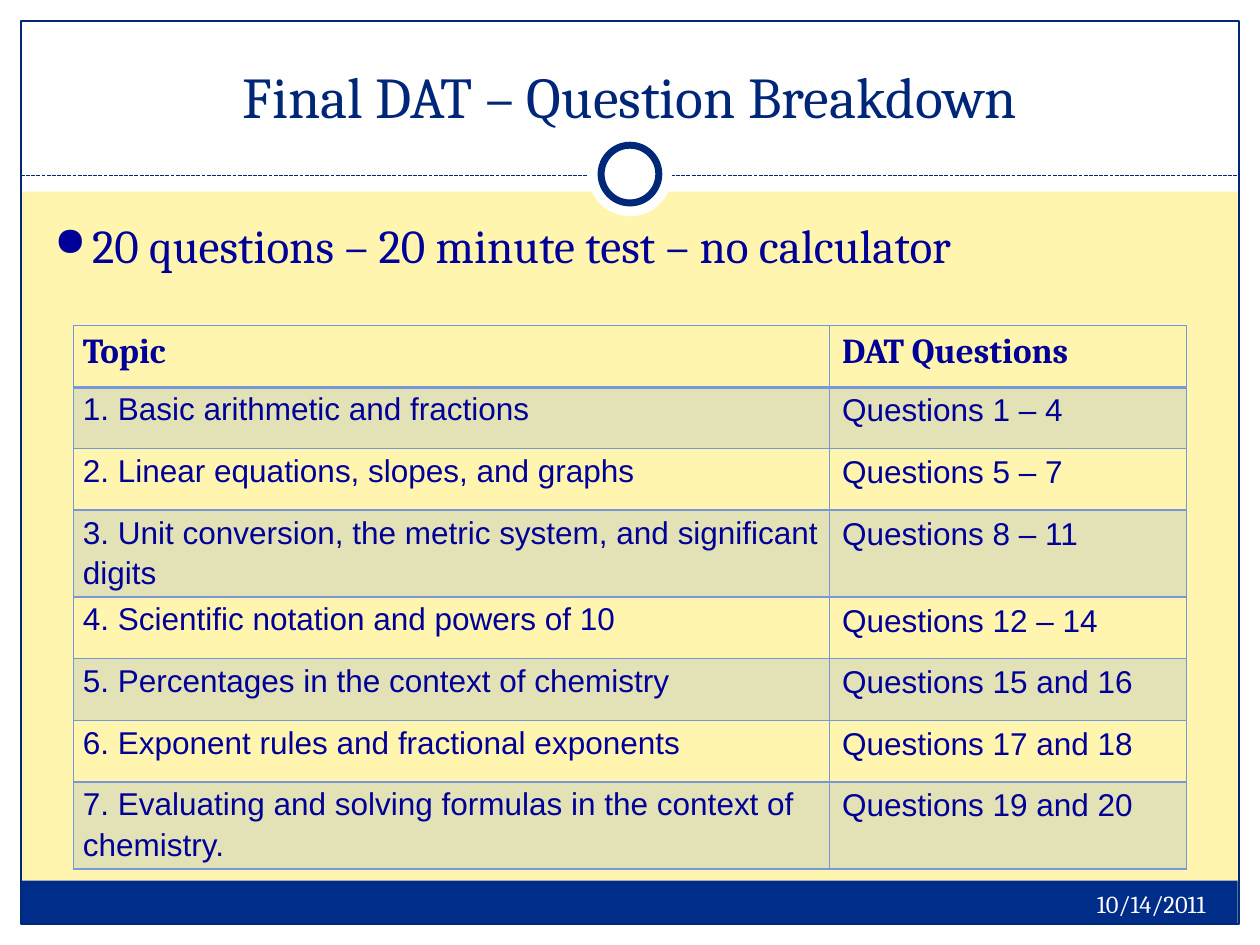
from typing import NamedTuple, Optional

from pptx import Presentation
from pptx.dml.color import RGBColor
from pptx.enum.dml import MSO_LINE
from pptx.enum.shapes import MSO_CONNECTOR, MSO_SHAPE as SH
from pptx.enum.text import MSO_ANCHOR as ANCHOR, PP_ALIGN as ALIGN
from pptx.oxml import parse_xml
from pptx.oxml.ns import nsdecls, qn
from pptx.util import Pt

WHITE = RGBColor(0xFF, 0xFF, 0xFF)
CREAM = RGBColor(0xFF, 0xF5, 0xAE)
NAVY = RGBColor(0x00, 0x28, 0x79)
TITLE_NAVY = RGBColor(0x00, 0x26, 0x78)
FOOTER_BLUE = RGBColor(0x00, 0x2D, 0x89)
INK = RGBColor(0x00, 0x00, 0x99)
GRID = RGBColor(0x75, 0x98, 0xD9)
SERIF, SANS = "Cambria", "Arial"

W, H = 720, 540
EDGE = 12


class Panel(NamedTuple):
    x: float
    y: float
    w: float
    h: float
    fill: Optional[RGBColor] = WHITE
    line: float = 0
    kind: SH = SH.RECTANGLE


class Topic(NamedTuple):
    name: str
    questions: str


BACKDROP = [
    Panel(0, H - EDGE, W, EDGE),
    Panel(0, 0, W, 109.5),
    Panel(0, 0, EDGE, H),
    Panel(W - EDGE, 0, EDGE, H),
    Panel(11.75, 503.25, 695.5, 24.5, FOOTER_BLUE),
    Panel(EDGE, EDGE, W - 2 * EDGE, H - 2 * EDGE, None, 0.75),
]
RINGS = [
    Panel(336, 75.6, 48, 48, kind=SH.OVAL),
    Panel(343.5, 83, 33, 33, line=4, kind=SH.OVAL),
]
HEADER = Topic("Topic", "DAT Questions")
TOPICS = [
    Topic("1. Basic arithmetic and fractions", "Questions 1 – 4"),
    Topic("2. Linear equations, slopes, and graphs", "Questions 5 – 7"),
    Topic("3. Unit conversion, the metric system, and significant digits", "Questions 8 – 11"),
    Topic("4. Scientific notation and powers of 10", "Questions 12 – 14"),
    Topic("5. Percentages in the context of chemistry", "Questions 15 and 16"),
    Topic("6. Exponent rules and fractional exponents", "Questions 17 and 18"),
    Topic("7. Evaluating and solving formulas in the context of chemistry.", "Questions 19 and 20"),
]


def write(tf, text: str, *, size: float, color: RGBColor = INK, font: str = SERIF,
          bold: bool = False, align=ALIGN.LEFT, spacing: float = 1.0):
    p = tf.paragraphs[0]
    p.alignment, p.line_spacing = align, spacing
    r = p.add_run()
    r.text = text
    f = r.font
    f.size, f.name, f.bold = Pt(size), font, bold
    f.color.rgb = color
    return p


def add_box(s, x: float, y: float, w: float, h: float, anchor=ANCHOR.TOP):
    tf = s.shapes.add_textbox(Pt(x), Pt(y), Pt(w), Pt(h)).text_frame
    tf.word_wrap, tf.vertical_anchor = True, anchor
    return tf


def add_panel(s, panel: Panel) -> None:
    sp = s.shapes.add_shape(panel.kind, Pt(panel.x), Pt(panel.y), Pt(panel.w), Pt(panel.h))
    sp.shadow.inherit = False
    if panel.fill is None:
        sp.fill.background()
    else:
        sp.fill.solid()
        sp.fill.fore_color.rgb = panel.fill
    if panel.line:
        sp.line.color.rgb, sp.line.width = NAVY, Pt(panel.line)
    else:
        sp.line.fill.background()


def add_rule(s, y: float) -> None:
    cn = s.shapes.add_connector(MSO_CONNECTOR.STRAIGHT, Pt(EDGE), Pt(y), Pt(W - EDGE), Pt(y))
    cn.line.color.rgb, cn.line.width = NAVY, Pt(0.75)
    cn.line.dash_style = MSO_LINE.SQUARE_DOT
    cn._element.spPr.append(parse_xml(f"<a:effectLst {nsdecls('a')}/>"))


def add_bullet(p, hang: float) -> None:
    pPr = p._p.get_or_add_pPr()
    pPr.set("marL", str(Pt(hang)))
    pPr.set("indent", str(-Pt(hang)))
    for tag in (f'<a:buClr {nsdecls("a")}><a:srgbClr val="{INK}"/></a:buClr>',
                f'<a:buSzPct {nsdecls("a")} val="85000"/>',
                f'<a:buChar {nsdecls("a")} char="●"/>'):
        pPr.append(parse_xml(tag))


def style_cell(cell, row: int) -> None:
    tcPr = cell._tc.get_or_add_tcPr()
    heavy_side = {0: "B", 1: "T"}.get(row)  # rule under the header
    for side in "LRTB":
        width = Pt(2 if side == heavy_side else 1)
        tcPr.append(parse_xml(
            f'<a:ln{side} {nsdecls("a")} w="{width}"><a:solidFill>'
            f'<a:srgbClr val="{GRID}"/></a:solidFill></a:ln{side}>'))
    if row % 2:
        cell.fill.solid()
        cell.fill.fore_color.rgb = GRID
        color = tcPr.find(qn("a:solidFill")).find(qn("a:srgbClr"))
        color.append(parse_xml(f'<a:alpha {nsdecls("a")} val="20000"/>'))
    else:
        cell.fill.background()


def add_topic_table(s, x: float, y: float, widths: tuple, row_h: float) -> None:
    rows = [HEADER] + TOPICS
    frame = s.shapes.add_table(len(rows), len(widths), Pt(x), Pt(y),
                               Pt(sum(widths)), Pt(row_h * len(rows)))
    tbl = frame.table
    tbl.first_row = tbl.horz_banding = False
    for col, width in zip(tbl.columns, widths):
        col.width = Pt(width)
    for i, topic in enumerate(rows):
        tbl.rows[i].height = Pt(row_h)
        look = dict(size=18, font=SANS) if i else dict(size=20, bold=True)
        for j, text in enumerate(topic):
            cell = tbl.cell(i, j)
            if j == 0:
                cell.margin_left = cell.margin_right = Pt(5.4)
                cell.margin_top = cell.margin_bottom = 0
            write(cell.text_frame, text, spacing=1.0 if j else 1.15, **look)
            style_cell(cell, i)


def main() -> None:
    prs = Presentation()
    prs.slide_width, prs.slide_height = Pt(W), Pt(H)
    s = prs.slides.add_slide(prs.slide_layouts[6])
    s.background.fill.solid()
    s.background.fill.fore_color.rgb = CREAM

    # Frame, dashed rule and ring
    for panel in BACKDROP:
        add_panel(s, panel)
    add_rule(s, 100.5)
    for ring in RINGS:
        add_panel(s, ring)

    # Title, date and bullet
    write(add_box(s, 24, 18, 672, 60, ANCHOR.BOTTOM), "Final DAT – Question Breakdown",
          size=33, color=TITLE_NAVY, align=ALIGN.CENTER)
    write(add_box(s, 456, 504.5, 240, 29), "10/14/2011",
          size=14, color=WHITE, align=ALIGN.RIGHT)
    p = write(add_box(s, 24, 120, 670, 360),
              "20 questions – 20 minute test – no calculator", size=27)
    add_bullet(p, 21.6)

    # Topics and their questions
    add_topic_table(s, 42, 186, (432, 204), 35.2)
    prs.save("out.pptx")


if __name__ == "__main__":
    main()
